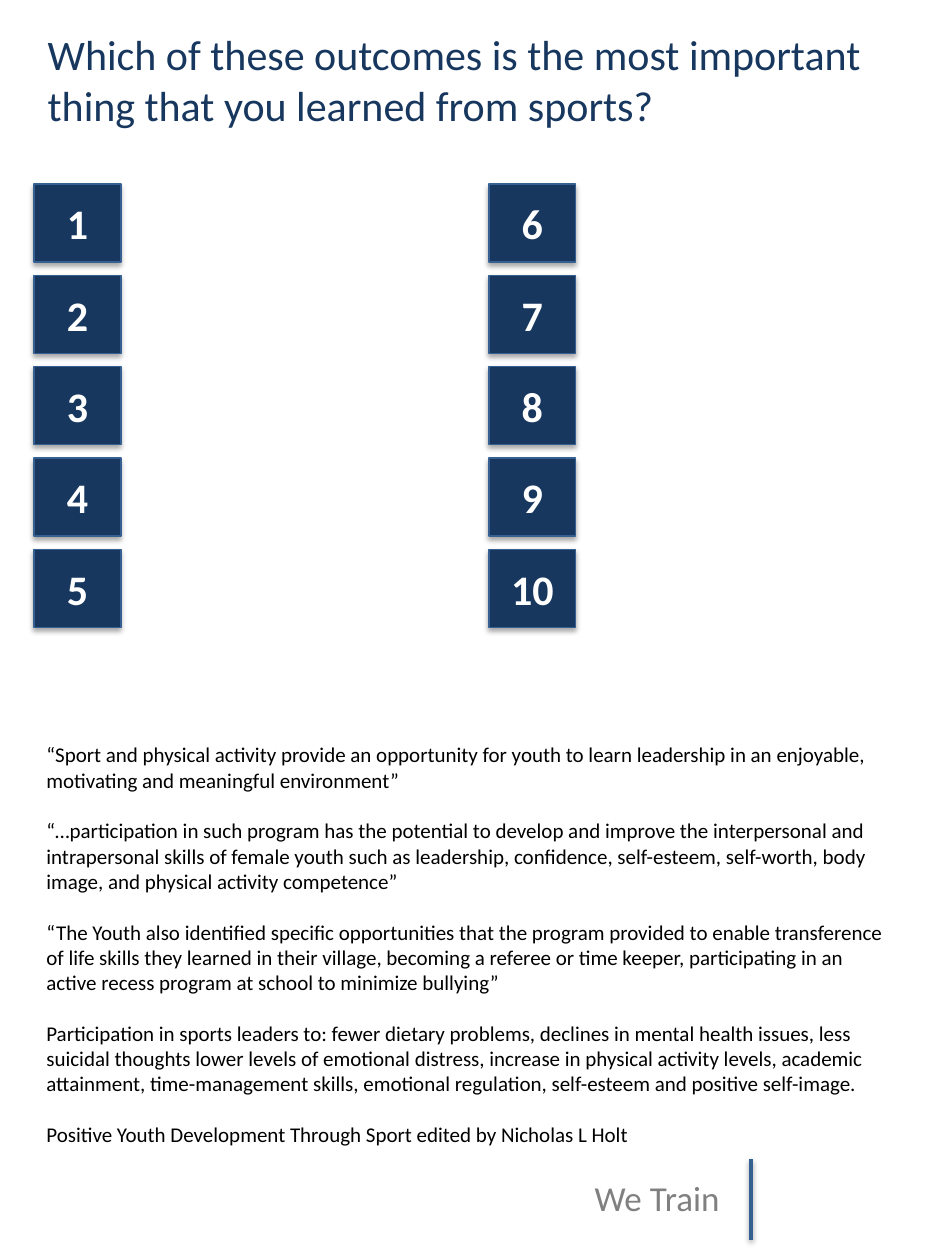
from dataclasses import dataclass

from lxml.etree import SubElement
from pptx import Presentation
from pptx.dml.color import RGBColor
from pptx.enum.shapes import MSO_CONNECTOR, MSO_SHAPE
from pptx.enum.text import MSO_ANCHOR, PP_ALIGN
from pptx.oxml.ns import qn
from pptx.slide import Slide
from pptx.util import Inches, Pt

NAVY = RGBColor(0x17, 0x37, 0x5E)
BLUE = RGBColor(0x37, 0x60, 0x92)
GRAY = RGBColor(0x80, 0x80, 0x80)
BLACK = RGBColor(0, 0, 0)
WHITE = RGBColor(0xFF, 0xFF, 0xFF)
FONT = "Calibri"

COLUMN_LEFTS = (0.27, 3.88)
ROWS = 5
FIRST_TOP = 1.46
LAST_TOP = 4.36
ROW_PITCH = (LAST_TOP - FIRST_TOP) / (ROWS - 1)

QUOTES = (
    "“Sport and physical activity provide an opportunity for youth to learn leadership "
    "in an enjoyable, motivating and meaningful environment”",
    "“…participation in such program has the potential to develop and improve the "
    "interpersonal and intrapersonal skills of female youth such as leadership, "
    "confidence, self-esteem, self-worth, body image, and physical activity competence”",
    "“The Youth also identified specific opportunities that the program provided to "
    "enable transference of life skills they learned in their village, becoming a "
    "referee or time keeper, participating in an active recess program at school to "
    "minimize bullying”",
    "Participation in sports leaders to: fewer dietary problems, declines in mental "
    "health issues, less suicidal thoughts lower levels of emotional distress, increase "
    "in physical activity levels, academic attainment, time-management skills, emotional "
    "regulation, self-esteem and positive self-image.",
    "Positive Youth Development Through Sport edited by Nicholas L Holt",
)


@dataclass
class TextBlock:
    left: float
    top: float
    width: float
    height: float
    size: float
    color: RGBColor
    paragraphs: tuple[str, ...]
    gap: float = 0


@dataclass
class NumberTile:
    number: int
    left: float
    top: float


TEXT_BLOCKS = (
    TextBlock(4.62, 9.29, 1.75, 0.44, 20, GRAY, ("We Train",)),
    TextBlock(0.27, 5.84, 6.96, 3.33, 12, BLACK, QUOTES, 14.6),
    TextBlock(0.28, 0.18, 6.95, 0.91, 24, NAVY,
              ("Which of these outcomes is the most important thing that you learned "
               "from sports?",)),
)

TILES = [
    NumberTile(column * ROWS + row + 1, left, FIRST_TOP + row * ROW_PITCH)
    for column, left in enumerate(COLUMN_LEFTS)
    for row in range(ROWS)
]


def add_shadow(shape, distance: float, opacity: int) -> None:
    effects = SubElement(shape._element.spPr, qn("a:effectLst"))
    shadow = SubElement(effects, qn("a:outerShdw"), blurRad=str(Pt(3.1)),
                        dist=str(Pt(distance)), dir="5400000", rotWithShape="0")
    color = SubElement(shadow, qn("a:srgbClr"), val="000000")
    SubElement(color, qn("a:alpha"), val=str(opacity * 1000))


def add_divider(slide: Slide) -> None:
    divider = slide.shapes.add_connector(
        MSO_CONNECTOR.STRAIGHT, Inches(5.96), Inches(9.2), Inches(5.96), Inches(9.84))
    divider.line.color.rgb = BLUE
    divider.line.width = Pt(2)
    add_shadow(divider, 1.6, 38)


def add_tile(slide: Slide, tile: NumberTile) -> None:
    shape = slide.shapes.add_shape(
        MSO_SHAPE.RECTANGLE, Inches(tile.left), Inches(tile.top), Inches(0.69), Inches(0.62))
    shape.fill.solid()
    shape.fill.fore_color.rgb = NAVY
    shape.line.color.rgb = BLUE
    shape.line.width = Pt(0.75)
    add_shadow(shape, 1.8, 35)
    text_frame = shape.text_frame
    text_frame.text = str(tile.number)
    text_frame.vertical_anchor = MSO_ANCHOR.MIDDLE
    paragraph = text_frame.paragraphs[0]
    paragraph.alignment = PP_ALIGN.CENTER
    font = paragraph.runs[0].font
    font.name, font.size, font.bold = FONT, Pt(24), True
    font.color.rgb = WHITE


def add_text(slide: Slide, block: TextBlock) -> None:
    shape = slide.shapes.add_textbox(
        Inches(block.left), Inches(block.top), Inches(block.width), Inches(block.height))
    text_frame = shape.text_frame
    text_frame.word_wrap = True
    text_frame.text = "\n".join(block.paragraphs)
    for index, paragraph in enumerate(text_frame.paragraphs):
        if index:
            paragraph.space_before = Pt(block.gap)
        font = paragraph.runs[0].font
        font.name, font.size = FONT, Pt(block.size)
        font.color.rgb = block.color


def main() -> None:
    presentation = Presentation()
    presentation.slide_width = Inches(7.5)
    presentation.slide_height = Inches(10)
    slide = presentation.slides.add_slide(presentation.slide_layouts[6])
    add_divider(slide)
    for tile in TILES:
        add_tile(slide, tile)
    for block in TEXT_BLOCKS:
        add_text(slide, block)
    presentation.save("out.pptx")


if __name__ == "__main__":
    main()
